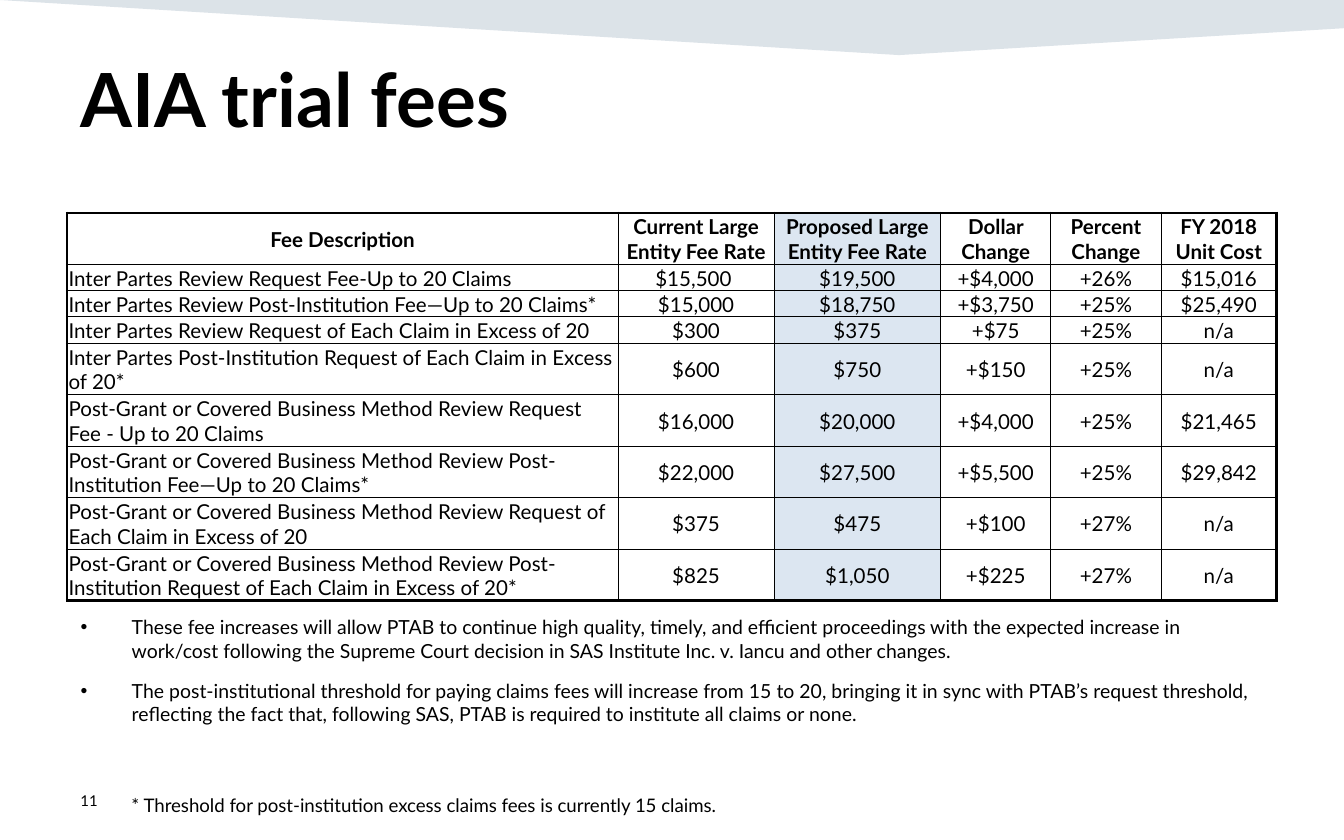
from lxml import etree
from pptx import Presentation
from pptx.dml.color import RGBColor
from pptx.enum.text import MSO_ANCHOR, MSO_AUTO_SIZE, PP_ALIGN
from pptx.oxml.ns import qn
from pptx.util import Inches, Pt

LEFT, CENTER = PP_ALIGN.LEFT, PP_ALIGN.CENTER
TOP, MIDDLE = MSO_ANCHOR.TOP, MSO_ANCHOR.MIDDLE
NO_FIT = MSO_AUTO_SIZE.NONE
BLACK, TINT, NAVY = "000000", "DCE6F1", "164469"
MARGIN, WIDTH = Inches(0.5), Inches(9)


def color(value):
    return RGBColor.from_string(value)


def write(tf, text, size=11, bold=False, align=LEFT, anchor=TOP, bullet=False, before=0):
    """Put one line of text per paragraph into a text frame."""
    tf.word_wrap = True
    tf.vertical_anchor = anchor
    for i, line in enumerate(text.split("\n")):
        p = tf.paragraphs[0] if i == 0 else tf.add_paragraph()
        p.alignment = align
        p.space_before = Pt(before if i else 0)
        if bullet:
            pPr = p._p.get_or_add_pPr()
            pPr.set("marL", str(Inches(0.38)))
            pPr.set("indent", str(-Inches(0.38)))
            etree.SubElement(pPr, qn("a:buChar")).set("char", "•")
        r = p.add_run()
        r.text = line
        r.font.name, r.font.size, r.font.bold = "Lato", Pt(size), bold
        r.font.color.rgb = color(BLACK)


prs = Presentation()
prs.slide_width, prs.slide_height = Inches(10), Inches(6.25)
s = prs.slides.add_slide(prs.slide_layouts[1])

# Translucent band along the top edge, in hundredths of an inch
fb = s.shapes.build_freeform(0, 0, scale=Inches(0.01))
fb.add_line_segments([(1000, 0), (1000, 21), (669, 41)], close=True)
band = fb.convert_to_shape()
band.shadow.inherit = False
band.line.fill.background()
band.fill.solid()
band.fill.fore_color.rgb = color(NAVY)
srgb = band._element.spPr.find(".//" + qn("a:srgbClr"))
etree.SubElement(srgb, qn("a:alpha")).set("val", "15000")

# Title and bullets
title, body = s.shapes.title, s.placeholders[1]
for sp, top, height in ((title, 0.34, 1.04), (body, 4.53, 1.19)):
    sp.left, sp.top, sp.width, sp.height = MARGIN, Inches(top), WIDTH, Inches(height)
    sp.text_frame.auto_size = NO_FIT
write(title.text_frame, "AIA trial fees", size=40, bold=True)
write(body.text_frame,
      "These fee increases will allow PTAB to continue high quality, timely, and efficient "
      "proceedings with the expected increase in work/cost following the Supreme Court "
      "decision in SAS Institute Inc. v. Iancu and other changes.\n"
      "The post-institutional threshold for paying claims fees will increase from 15 to 20, "
      "bringing it in sync with PTAB’s request threshold, reflecting the fact that, "
      "following SAS, PTAB is required to institute all claims or none.",
      size=10.4, bullet=True, before=9)

# Fee table
rows = [
    ("Fee Description", "Current Large Entity Fee Rate", "Proposed Large Entity Fee Rate",
     "Dollar Change", "Percent Change", "FY 2018 Unit Cost"),
    ("Inter Partes Review Request Fee-Up to 20 Claims",
     "$15,500 ", "$19,500", "+$4,000", "+26%", "$15,016"),
    ("Inter Partes Review Post-Institution Fee—Up to 20 Claims*",
     "$15,000", "$18,750", "+$3,750", "+25%", "$25,490"),
    ("Inter Partes Review Request of Each Claim in Excess of 20",
     "$300", "$375", "+$75", "+25%", "n/a"),
    ("Inter Partes Post-Institution Request of Each Claim in Excess of 20*",
     "$600", "$750", "+$150", "+25%", "n/a"),
    ("Post-Grant or Covered Business Method Review Request Fee - Up to 20 Claims",
     "$16,000", "$20,000", "+$4,000", "+25%", "$21,465"),
    ("Post-Grant or Covered Business Method Review Post-Institution Fee—Up to 20 Claims*",
     "$22,000", "$27,500", "+$5,500", "+25%", "$29,842"),
    ("Post-Grant or Covered Business Method Review Request of Each Claim in Excess of 20",
     "$375", "$475", "+$100", "+27%", "n/a"),
    ("Post-Grant or Covered Business Method Review Post-Institution Request of Each Claim "
     "in Excess of 20*",
     "$825", "$1,050", "+$225", "+27%", "n/a"),
]
widths = [4.1, 1.16, 1.24, 0.82, 0.82, 0.86]
last_row, last_col = len(rows) - 1, len(widths) - 1
table = s.shapes.add_table(len(rows), len(widths), MARGIN, Pt(114),
                           WIDTH, Inches(2.86)).table
for col, w in zip(table.columns, widths):
    col.width = Inches(w)
for i, row in enumerate(rows):
    table.rows[i].height = Pt(14.1 if i in (1, 2, 3) else 27.6)
    for j, text in enumerate(row):
        cell = table.cell(i, j)
        cell.margin_left = cell.margin_top = cell.margin_right = Inches(0.01)
        cell.margin_bottom = 0
        cell.vertical_anchor = MIDDLE
        write(cell.text_frame, text, bold=i == 0, align=CENTER if i == 0 or j else LEFT)
        # Thick outer frame, thin inner rules
        tcPr = cell._tc.get_or_add_tcPr()
        edges = {"L": j == 0, "R": j == last_col, "T": i == 0, "B": i == last_row}
        for side, outer in edges.items():
            ln = etree.SubElement(tcPr, qn("a:ln" + side), w=str(Pt(1.5 if outer else 0.5)))
            fill = etree.SubElement(ln, qn("a:solidFill"))
            etree.SubElement(fill, qn("a:srgbClr"), val=BLACK)
        if j == 2:
            cell.fill.solid()
            cell.fill.fore_color.rgb = color(TINT)
        else:
            cell.fill.background()

# Page number and footnote
number = s.shapes.add_textbox(MARGIN, Inches(5.79), Inches(2.25), Inches(0.33))
write(number.text_frame, "11", size=8, anchor=MIDDLE)
note = s.shapes.add_textbox(Inches(0.88), Inches(5.86), Inches(6.68), Inches(0.27))
write(note.text_frame,
      "* Threshold for post-institution excess claims fees is currently 15 claims.", size=10)

prs.save("out.pptx")
